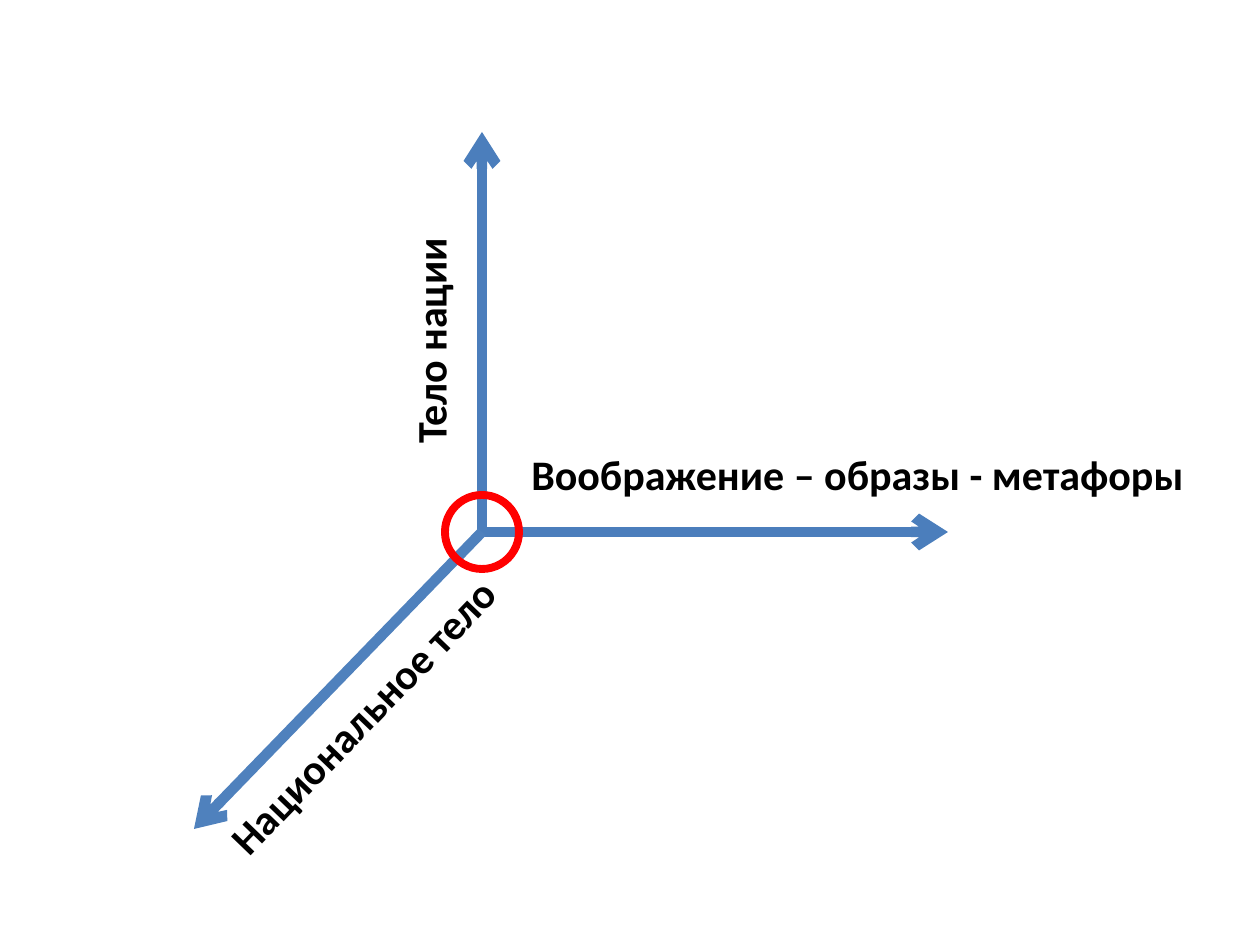
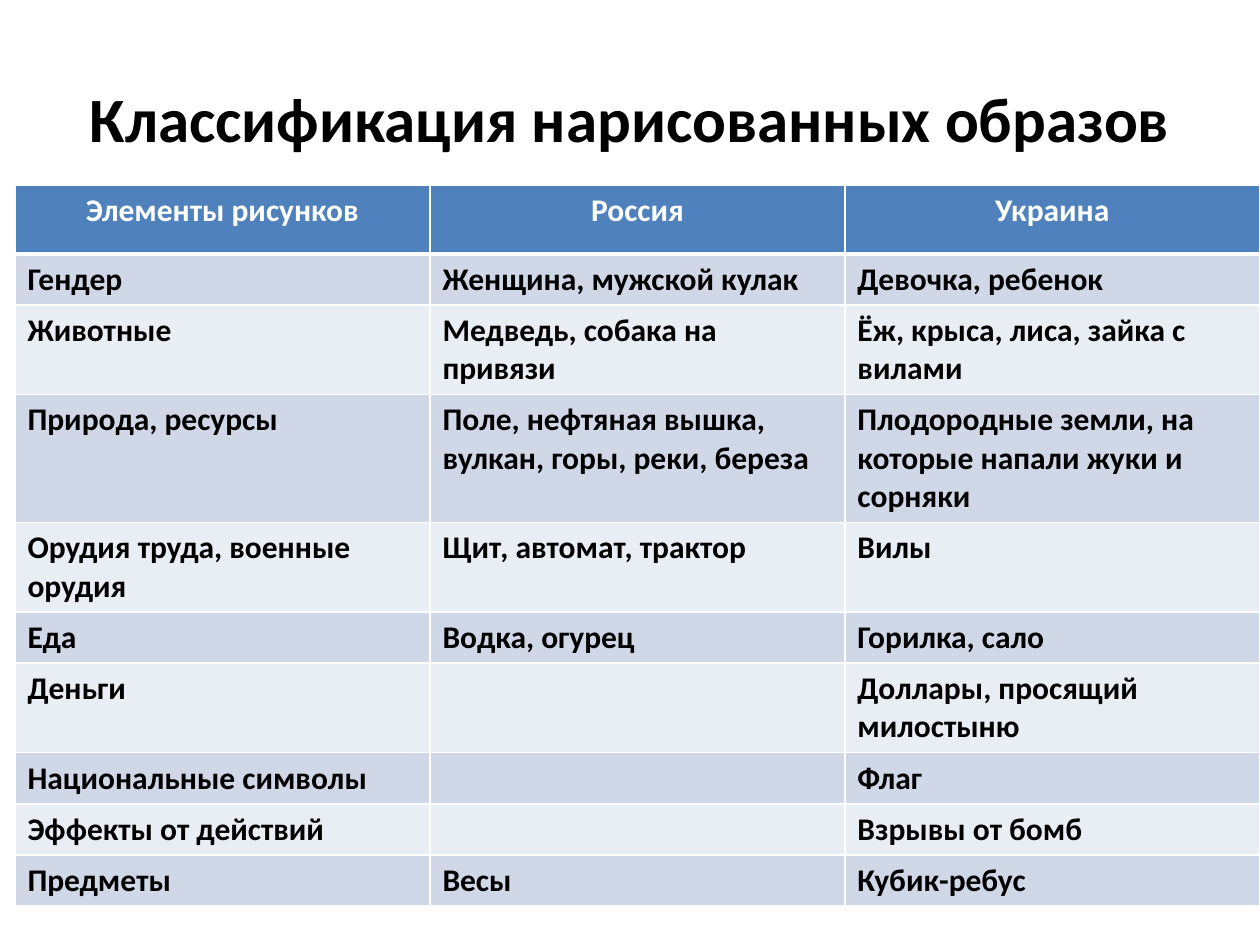
from dataclasses import dataclass

from lxml.etree import SubElement
from pptx import Presentation
from pptx.dml.color import RGBColor
from pptx.enum.shapes import MSO_CONNECTOR, MSO_SHAPE
from pptx.enum.text import MSO_ANCHOR, PP_ALIGN
from pptx.oxml.ns import qn
from pptx.slide import Slide
from pptx.table import Table, _Cell
from pptx.text.text import _Paragraph
from pptx.util import Emu, Pt

# Shared look
FONT = "Calibri"
BLACK = RGBColor(0x00, 0x00, 0x00)
WHITE = RGBColor(0xFF, 0xFF, 0xFF)
RED = RGBColor(0xFF, 0x00, 0x00)
BLUE = RGBColor(0x4F, 0x81, 0xBD)
STEEL = RGBColor(0x4B, 0x7E, 0xBC)
BANDS = (RGBColor(0xD0, 0xD8, 0xE8), RGBColor(0xE9, 0xED, 0xF4))

WIDTH, HEIGHT = 1260, 945


def px(num: int) -> Emu:
    return Emu(round(num * 914400 / 126))


@dataclass(frozen=True)
class Box:
    left: int
    top: int
    width: int
    height: int

    def emu(self) -> tuple[Emu, ...]:
        return tuple(map(px, (self.left, self.top, self.width, self.height)))


@dataclass(frozen=True)
class Axis:
    tip: tuple[int, int]
    color: RGBColor
    text: str
    box: Box
    turn: float = 0


# Axes share one origin
ORIGIN = (482, 532)
RADIUS = 37
AXES = (
    Axis((482, 132), STEEL, " Тело нации", Box(263, 267, 334, 63), 270),
    Axis((948, 532), STEEL, "Воображение – образы - метафоры",
         Box(519, 442, 694, 63)),
    Axis((194, 829), BLUE, "Национальное тело",
         Box(165, 673, 417, 63), 313.9),
)

# Table content
TITLE = "Классификация нарисованных образов"
GRID = Box(15, 185, 1245, 715)
HEAD, ROW = 69, 51
ROWS = (
    ("Элементы рисунков", "Россия", "Украина"),
    ("Гендер", "Женщина, мужской кулак", "Девочка, ребенок"),
    ("Животные", "Медведь, собака на привязи",
     "Ёж, крыса, лиса, зайка с вилами"),
    ("Природа, ресурсы", "Поле, нефтяная вышка, вулкан, горы, реки, береза",
     "Плодородные земли, на которые напали жуки и сорняки"),
    ("Орудия труда, военные орудия", "Щит, автомат, трактор", "Вилы"),
    ("Еда", "Водка, огурец", "Горилка, сало"),
    ("Деньги", "", "Доллары, просящий милостыню"),
    ("Национальные символы", "", "Флаг"),
    ("Эффекты от действий", "", "Взрывы от бомб"),
    ("Предметы", "Весы", "Кубик-ребус"),
)


def add_run(para: _Paragraph, text: str, size: int,
            color: RGBColor = BLACK) -> None:
    run = para.add_run()
    run.text = text
    font = run.font
    font.name, font.size, font.bold = FONT, Pt(size), True
    font.color.rgb = color


def draw_axis(slide: Slide, axis: Axis) -> None:
    ends = map(px, (*ORIGIN, *axis.tip))
    line = slide.shapes.add_connector(MSO_CONNECTOR.STRAIGHT, *ends)
    line.line.color.rgb = axis.color
    line.line.width = Pt(6)
    SubElement(line.line._get_or_add_ln(), qn("a:tailEnd"), type="arrow")
    SubElement(line._element.spPr, qn("a:effectLst"))


def draw_label(slide: Slide, axis: Axis) -> None:
    label = slide.shapes.add_textbox(*axis.box.emu())
    label.rotation = axis.turn
    label.text_frame.word_wrap = True
    add_run(label.text_frame.paragraphs[0], axis.text, 24)


def draw_ring(slide: Slide) -> None:
    left, top = (mid - RADIUS for mid in ORIGIN)
    box = Box(left, top, 2 * RADIUS, 2 * RADIUS)
    ring = slide.shapes.add_shape(MSO_SHAPE.OVAL, *box.emu())
    ring.shadow.inherit = False
    ring.fill.background()
    ring.line.color.rgb = RED
    ring.line.width = Pt(4.5)


def draw_title(slide: Slide, text: str) -> None:
    title = slide.shapes.title
    title.left, title.top, title.width, title.height = \
        Box(63, 38, 1134, 158).emu()
    title.text_frame.vertical_anchor = MSO_ANCHOR.MIDDLE
    para = title.text_frame.paragraphs[0]
    para.alignment = PP_ALIGN.CENTER
    add_run(para, text, 36)


def rule_off(cell: _Cell) -> None:
    # Thick white edge below a header cell
    props = cell._tc.get_or_add_tcPr()
    edge = SubElement(props, qn("a:lnB"), w=str(Pt(3)))
    fill = SubElement(edge, qn("a:solidFill"))
    SubElement(fill, qn("a:srgbClr"), val=str(WHITE))
    props.insert(0, edge)


def fill_cell(table: Table, row: int, col: int, text: str) -> None:
    cell = table.cell(row, col)
    cell.fill.solid()
    cell.fill.fore_color.rgb = BANDS[(row - 1) % 2] if row else BLUE
    para = cell.text_frame.paragraphs[0]
    if row == 0:
        para.alignment = PP_ALIGN.CENTER
        rule_off(cell)
    if text:
        add_run(para, text, 18, BLACK if row else WHITE)


def draw_table(slide: Slide) -> None:
    frame = slide.shapes.add_table(len(ROWS), len(ROWS[0]), *GRID.emu())
    table = frame.table
    for row, texts in enumerate(ROWS):
        table.rows[row].height = px(ROW if row else HEAD)
        for col, text in enumerate(texts):
            fill_cell(table, row, col, text)


def main() -> None:
    deck = Presentation()
    deck.slide_width, deck.slide_height = px(WIDTH), px(HEIGHT)

    # Slide 1: three axes
    axes = deck.slides.add_slide(deck.slide_layouts.get_by_name("Blank"))
    for axis in AXES:
        draw_axis(axes, axis)
    for axis in AXES:
        draw_label(axes, axis)
    draw_ring(axes)

    # Slide 2: table of images
    images = deck.slides.add_slide(deck.slide_layouts.get_by_name("Title Only"))
    draw_title(images, TITLE)
    draw_table(images)

    deck.save("out.pptx")


if __name__ == "__main__":
    main()
